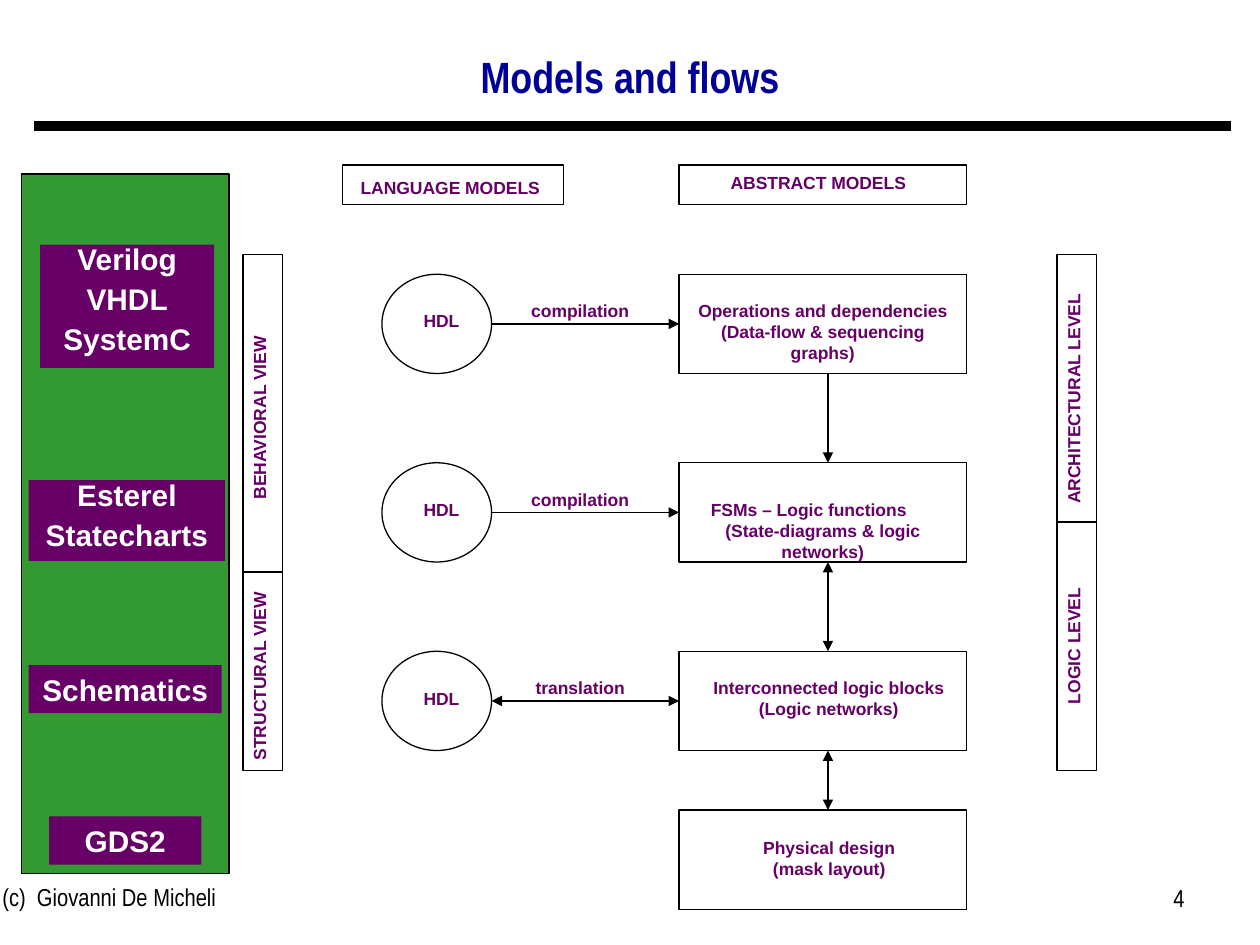
from lxml.etree import SubElement
from pptx import Presentation
from pptx.dml.color import RGBColor
from pptx.enum.shapes import MSO_CONNECTOR, MSO_SHAPE as Kind
from pptx.enum.text import MSO_ANCHOR as Anchor, PP_ALIGN as Align
from pptx.oxml.ns import qn
from pptx.util import Cm, Pt

BLACK = RGBColor(0x00, 0x00, 0x00)
WHITE = RGBColor(0xFF, 0xFF, 0xFF)
NAVY = RGBColor(0x00, 0x00, 0x99)
PURPLE = RGBColor(0x66, 0x00, 0x66)
GREEN = RGBColor(0x33, 0x99, 0x33)

# Content; lengths in centimetres
TITLE = "Models and flows"
FOOTERS = [("(c)  Giovanni De Micheli", -0.2, 17.65, 8.05, Align.LEFT),
           ("4", 18.21, 17.68, 5.92, Align.RIGHT)]
# Headings: text, frame left, frame width, label left, label top
HEADINGS = [("LANGUAGE MODELS", 6.91, 4.45, 6.88, 3.43),
            ("ABSTRACT MODELS", 13.69, 5.79, 14.3, 3.33)]
# Flow rows: language, step, arrow at both ends
STEPS = [("HDL", "compilation", False),
         ("HDL", "compilation", False),
         ("HDL", "translation", True)]
# Models: paragraphs, label left, label width, label offset from box top
MODELS = [
    (["Operations and dependencies (Data-flow & sequencing graphs)"], 13.69, 5.79, 0.39),
    (["FSMs – Logic functions", "(State-diagrams & logic networks)"], 13.69, 5.79, 0.6),
    (["Interconnected logic blocks (Logic networks)"], 14.1, 5.21, 0.39),
    (["Physical design", "(mask layout)"], 15.09, 3.25, 0.41),
]
DOWN_BOTH_ENDS = [False, True, True]
# Side bars: left, divider height, (text, middle height) pairs
BARS = [(4.9, 11.53, [("BEHAVIORAL VIEW", 8.42), ("STRUCTURAL VIEW", 13.63)]),
        (21.31, 10.52, [("ARCHITECTURAL LEVEL", 8.04), ("LOGIC LEVEL", 13.02)])]
FORMATS = [(["Verilog", "VHDL", "SystemC"], (0.81, 4.93, 3.51, 2.49)),
           (["Esterel", "Statecharts"], (0.58, 9.68, 3.96, 1.63)),
           (["Schematics"], (0.58, 13.41, 3.89, 0.97)),
           (["GDS2"], (0.99, 16.46, 3.07, 0.97))]

# Grid
ROW_TOPS = [5.53 + 3.8 * row for row in range(3)] + [16.33]
BOX_LEFT, BOX_WIDTH, BOX_HEIGHT = 13.69, 5.79, 2.0
CIRCLE_LEFT, CIRCLE_WIDTH = 7.7, 2.21
DOWN_X = 16.69
BAR_TOP, BAR_WIDTH, BAR_HEIGHT = 5.13, 0.79, 10.41
LABEL_HEIGHT = 0.69

LABEL_FONT = {"name": "Arial", "size": Pt(10), "bold": True}
FORMAT_FONT = {"name": "Arial", "size": Pt(17), "bold": True}
FOOTER_FONT = {"name": "Arial Narrow", "size": Pt(14), "bold": False}
TITLE_FONT = {"name": "Arial Narrow", "size": Pt(25), "bold": True}


def apply(target, values):
    for name, value in values.items():
        setattr(target, name, value)


def write(shape, lines, font, color, align=Align.CENTER, wrap=True, anchor=Anchor.TOP, **para_format):
    frame = shape.text_frame
    apply(frame, {"word_wrap": wrap, "vertical_anchor": anchor,
                  "margin_left": Cm(0.25), "margin_right": Cm(0.25),
                  "margin_top": Cm(0.13), "margin_bottom": Cm(0.13)})
    frame.text = "\n".join(lines)
    for para in frame.paragraphs:
        apply(para, {"alignment": align, **para_format})
        for span in para.runs:
            apply(span.font, font)
            span.font.color.rgb = color


def add_shape(page, kind, left, top, width, height, fill=None, outlined=True):
    shape = page.shapes.add_shape(kind, Cm(left), Cm(top), Cm(width), Cm(height))
    shape.shadow.inherit = False
    if fill is None:
        shape.fill.background()
    else:
        shape.fill.solid()
        shape.fill.fore_color.rgb = fill
    if outlined:
        shape.line.color.rgb = BLACK
        shape.line.width = Pt(0.75)
    else:
        shape.line.fill.background()
    return shape


def add_label(page, lines, left, top, width, height=LABEL_HEIGHT, font=LABEL_FONT,
              color=PURPLE, align=Align.CENTER):
    box = page.shapes.add_textbox(Cm(left), Cm(top), Cm(width), Cm(height))
    write(box, lines, font, color, align)
    return box


def add_line(page, x1, y1, x2, y2, ends=(), width=0.75):
    line = page.shapes.add_connector(MSO_CONNECTOR.STRAIGHT, Cm(x1), Cm(y1), Cm(x2), Cm(y2))
    line.line.color.rgb = BLACK
    line.line.width = Pt(width)
    outline = line.line._get_or_add_ln()
    for end in ends:
        SubElement(outline, qn(f"a:{end}"), type="triangle")
    SubElement(line._element.spPr, qn("a:effectLst"))
    return line


def arrow_ends(both):
    return ("headEnd", "tailEnd") if both else ("tailEnd",)


def main():
    deck = Presentation()
    deck.slide_width, deck.slide_height = Cm(25.4), Cm(19.05)
    page = deck.slides.add_slide(deck.slide_layouts[5])

    # Title, rule and footers
    title = page.shapes.title
    apply(title, {"left": Cm(1.9), "top": Cm(0), "width": Cm(21.6), "height": Cm(3.18)})
    write(title, [TITLE], TITLE_FONT, NAVY, anchor=Anchor.MIDDLE, line_spacing=0.9)
    add_line(page, 0.69, 2.54, 24.82, 2.54, width=6)
    for text, left, top, width, align in FOOTERS:
        add_label(page, [text], left, top, width, 1.32, FOOTER_FONT, BLACK, align)

    # Column headings
    for text, left, width, label_left, label_top in HEADINGS:
        add_shape(page, Kind.RECTANGLE, left, 3.33, width, 0.79)
        add_label(page, [text], label_left, label_top, 4.39)

    # Abstract models
    boxes = []
    for top, (lines, left, width, offset) in zip(ROW_TOPS, MODELS):
        boxes.append(add_shape(page, Kind.RECTANGLE, BOX_LEFT, top, BOX_WIDTH, BOX_HEIGHT))
        label = add_label(page, lines, left, top + offset, width, 1.2)
        if lines[0].startswith("FSMs"):
            first = label.text_frame.paragraphs[0]
            first.alignment = Align.LEFT
            first._p.get_or_add_pPr().set("marL", str(Cm(0.39)))

    # Languages and the steps to their models
    for top, box, (language, step, both) in zip(ROW_TOPS, boxes, STEPS):
        add_shape(page, Kind.OVAL, CIRCLE_LEFT, top, CIRCLE_WIDTH, BOX_HEIGHT)
        middle = top + BOX_HEIGHT / 2
        arrow = add_line(page, CIRCLE_LEFT + CIRCLE_WIDTH, middle, BOX_LEFT, middle, arrow_ends(both))
        arrow.end_connect(box, 1)
        add_label(page, [language], 8.1, top + 0.6, 1.6)
        add_label(page, [step], 9.5, top + 0.39, 4.39)

    # Arrows between models
    for upper, lower, both in zip(ROW_TOPS, ROW_TOPS[1:], DOWN_BOTH_ENDS):
        add_line(page, DOWN_X, upper + BOX_HEIGHT, DOWN_X, lower, arrow_ends(both))

    # Side bars with upright labels
    for left, divider, labels in BARS:
        add_shape(page, Kind.RECTANGLE, left, BAR_TOP, BAR_WIDTH, BAR_HEIGHT)
        add_line(page, left, divider, left + BAR_WIDTH, divider)
        for text, middle in labels:
            label = add_label(page, [text], left + 0.33 - BOX_WIDTH / 2,
                              middle - LABEL_HEIGHT / 2, BOX_WIDTH)
            label.rotation = 270

    # Format panel
    add_shape(page, Kind.FLOWCHART_PROCESS, 0.43, 3.51, 4.19, 14.1, GREEN)
    for lines, place in FORMATS:
        tag = add_shape(page, Kind.RECTANGLE, *place, fill=PURPLE, outlined=False)
        spacing = {"line_spacing": 0.7, "space_before": Pt(8.5)} if len(lines) > 1 else {}
        write(tag, lines, FORMAT_FONT, WHITE, wrap=False, **spacing)

    deck.save("out.pptx")


if __name__ == "__main__":
    main()
